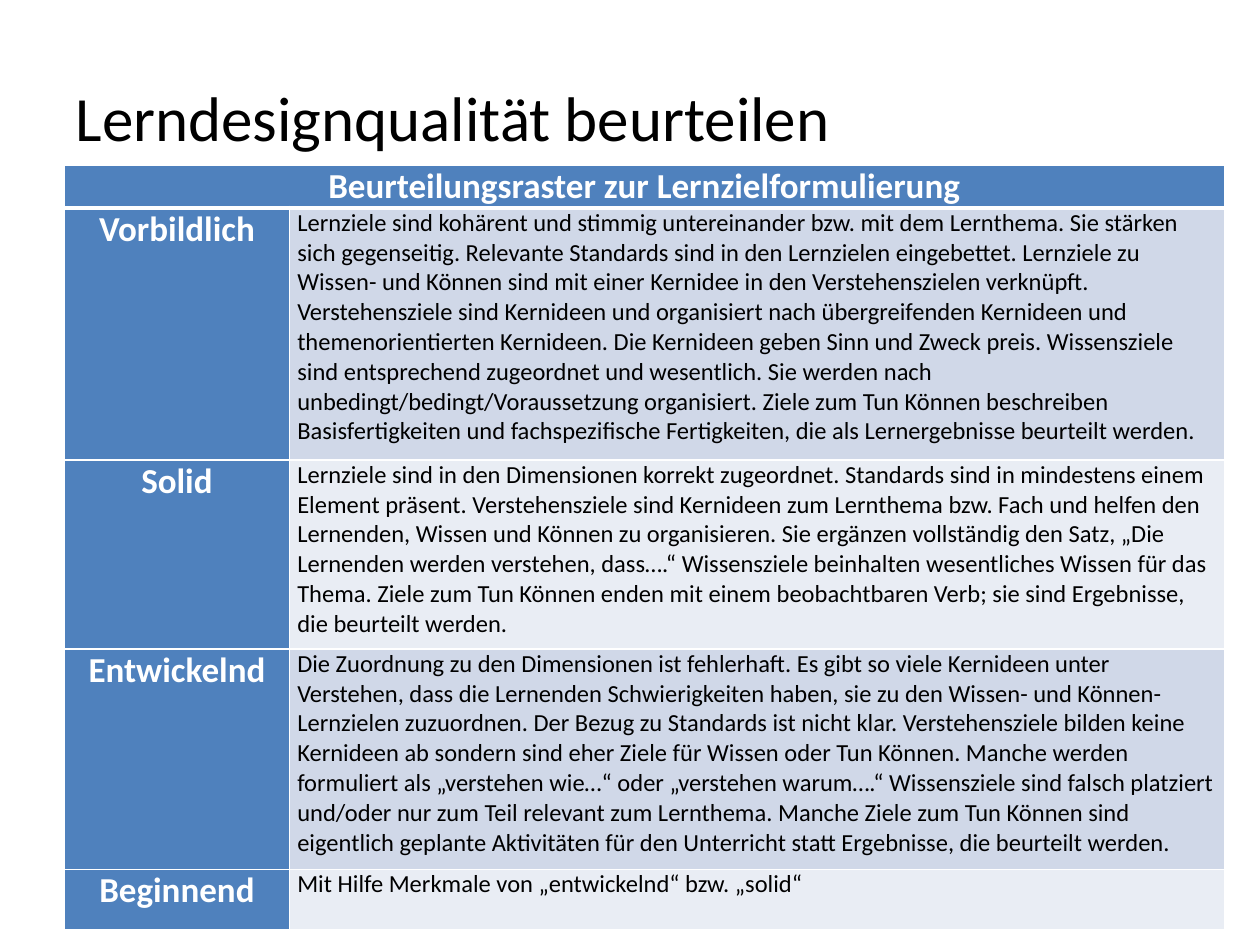
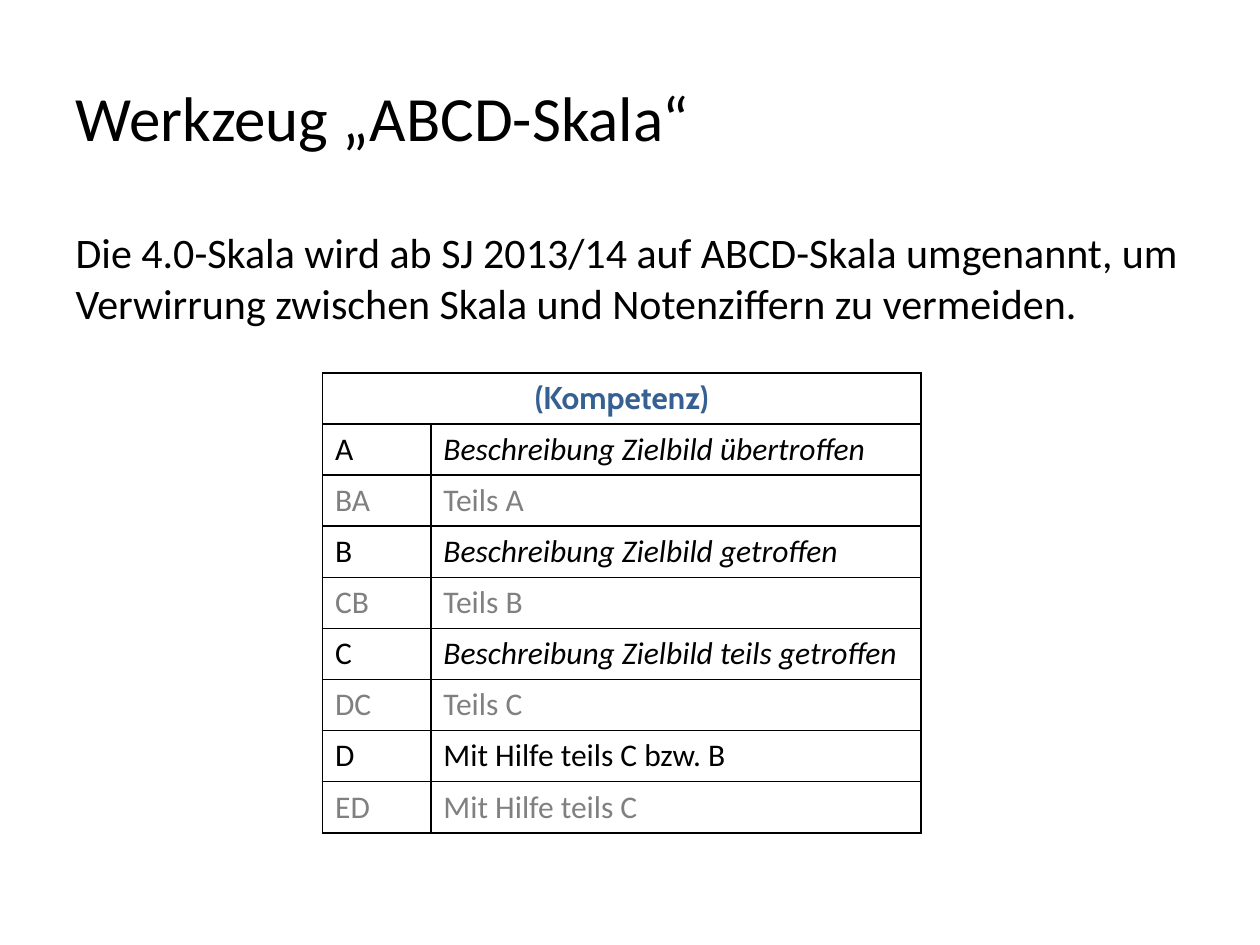
from dataclasses import dataclass

from lxml import etree
from pptx import Presentation
from pptx.dml.color import RGBColor
from pptx.enum import text
from pptx.oxml import ns
from pptx.util import Inches, Pt


@dataclass(frozen=True)
class Theme:
    font: str = "Calibri"
    accent_font: str = "Cabin"
    black: str = "000000"
    white: str = "FFFFFF"
    blue: str = "4F81BD"
    navy: str = "376092"
    grey: str = "808080"
    bands: tuple = ("D0D8E8", "E9EDF4")
    title: int = 36
    body: int = 24
    label: int = 20
    scale: int = 18
    detail: int = 14


T = Theme()
LEFT, CENTER = text.PP_ALIGN.LEFT, text.PP_ALIGN.CENTER
TOP, MIDDLE = text.MSO_ANCHOR.TOP, text.MSO_ANCHOR.MIDDLE

RUBRIC_HEAD = "Beurteilungsraster zur Lernzielformulierung"
RUBRIC = [
    ("Vorbildlich", 2.0,
     "Lernziele sind kohärent und stimmig untereinander bzw. mit dem Lernthema. "
     "Sie stärken sich gegenseitig. Relevante Standards sind in den Lernzielen "
     "eingebettet. Lernziele zu Wissen- und Können sind mit einer Kernidee in den "
     "Verstehenszielen verknüpft. Verstehensziele sind Kernideen und organisiert "
     "nach übergreifenden Kernideen und themenorientierten Kernideen. Die Kernideen "
     "geben Sinn und Zweck preis. Wissensziele sind entsprechend zugeordnet und "
     "wesentlich. Sie werden nach unbedingt/bedingt/Voraussetzung organisiert. Ziele "
     "zum Tun Können beschreiben Basisfertigkeiten und fachspezifische Fertigkeiten, "
     "die als Lernergebnisse beurteilt werden."),
    ("Solid", 1.5,
     "Lernziele sind in den Dimensionen korrekt zugeordnet. Standards sind in "
     "mindestens einem Element präsent. Verstehensziele sind Kernideen zum Lernthema "
     "bzw. Fach und helfen den Lernenden, Wissen und Können zu organisieren. Sie "
     "ergänzen vollständig den Satz, „Die Lernenden werden verstehen, dass….“ "
     "Wissensziele beinhalten wesentliches Wissen für das Thema. Ziele zum Tun Können "
     "enden mit einem beobachtbaren Verb; sie sind Ergebnisse, die beurteilt werden."),
    ("Entwickelnd", 1.75,
     "Die Zuordnung zu den Dimensionen ist fehlerhaft. Es gibt so viele Kernideen "
     "unter Verstehen, dass die Lernenden Schwierigkeiten haben, sie zu den Wissen- "
     "und Können-Lernzielen zuzuordnen. Der Bezug zu Standards ist nicht klar. "
     "Verstehensziele bilden keine Kernideen ab sondern sind eher Ziele für Wissen "
     "oder Tun Können. Manche werden formuliert als „verstehen wie…“ oder „verstehen "
     "warum….“ Wissensziele sind falsch platziert und/oder nur zum Teil relevant zum "
     "Lernthema. Manche Ziele zum Tun Können sind eigentlich geplante Aktivitäten für "
     "den Unterricht statt Ergebnisse, die beurteilt werden."),
    ("Beginnend", 0.48, "Mit Hilfe Merkmale von „entwickelnd“ bzw. „solid“"),
]

SCALE_INTRO = ("Die 4.0-Skala wird ab SJ 2013/14 auf ABCD-Skala umgenannt, um "
               "Verwirrung zwischen Skala und Notenziffern zu vermeiden.")
SCALE_HEAD = "(Kompetenz)"
SCALE = [
    ("A", "Beschreibung Zielbild übertroffen"),
    ("BA", "Teils A"),
    ("B", "Beschreibung Zielbild getroffen"),
    ("CB", "Teils B"),
    ("C", "Beschreibung Zielbild teils getroffen"),
    ("DC", "Teils C"),
    ("D", "Mit Hilfe teils C bzw. B"),
    ("ED", "Mit Hilfe teils C"),
]


def style_text(tf, size, color=T.black, font=T.font, bold=False, italic=False, align=LEFT):
    for p in tf.paragraphs:
        p.alignment = align
        for r in p.runs:
            f = r.font
            f.name, f.size, f.bold, f.italic = font, Pt(size), bold, italic
            f.color.rgb = RGBColor.from_string(color)


def fill_placeholder(sp, box, content, size, anchor):
    sp.left, sp.top, sp.width, sp.height = map(Inches, box)
    tf = sp.text_frame
    tf.text = content
    tf.word_wrap = True
    tf.auto_size = text.MSO_AUTO_SIZE.NONE
    tf.vertical_anchor = anchor
    style_text(tf, size)
    return tf


def add_slide(prs, layout, title):
    s = prs.slides.add_slide(prs.slide_layouts[layout])
    fill_placeholder(s.shapes.title, (0.5, 0.3, 7.18, 1.25), title, T.title, MIDDLE)
    return s


def add_intro(s, box, content):
    tf = fill_placeholder(s.placeholders[1], box, content, T.body, TOP)
    p = tf.paragraphs[0]
    p.space_before = Pt(0)
    pPr = p._p.get_or_add_pPr()
    pPr.set("marL", "0")
    pPr.set("indent", "0")
    etree.SubElement(pPr, ns.qn("a:buNone"))


def set_borders(cell, color, bottom=1):
    tcPr = cell._tc.get_or_add_tcPr()
    for side, width in (("L", 1), ("R", 1), ("T", 1), ("B", bottom)):
        ln = etree.SubElement(tcPr, ns.qn(f"a:ln{side}"), w=str(Pt(width)))
        fill = etree.SubElement(ln, ns.qn("a:solidFill"))
        etree.SubElement(fill, ns.qn("a:srgbClr"), val=color)


def add_grid(s, left, top, cols, rows, margins, border, head_bottom=1):
    frame = s.shapes.add_table(len(rows), len(cols), Inches(left), Inches(top),
                               Inches(sum(cols)), Inches(sum(rows)))
    table = frame.table
    table.first_row = table.horz_banding = False
    for column, width in zip(table.columns, cols):
        column.width = Inches(width)
    for i, (row, height) in enumerate(zip(table.rows, rows)):
        row.height = Inches(height)
        for cell in row.cells:
            cell.margin_left = cell.margin_right = Inches(margins[0])
            cell.margin_top = cell.margin_bottom = Inches(margins[1])
            set_borders(cell, border, head_bottom if i == 0 else 1)
    table.cell(0, 0).merge(table.cell(0, len(cols) - 1))
    return table


def fill_cell(cell, content, fill=None, after=0, **style):
    cell.text = content
    if fill:
        cell.fill.solid()
        cell.fill.fore_color.rgb = RGBColor.from_string(fill)
    else:
        cell.fill.background()
    style_text(cell.text_frame, **style)
    if after:
        cell.text_frame.paragraphs[0].space_after = Pt(after)


def add_rubric(s, left, top):
    table = add_grid(s, left, top, (1.79, 7.42), [0.25] + [h for _, h, _ in RUBRIC],
                     (0.06, 0), T.white, head_bottom=3)
    label = dict(fill=T.blue, size=T.label, color=T.white, bold=True, align=CENTER)
    fill_cell(table.cell(0, 0), RUBRIC_HEAD, **label)
    table.cell(0, 0).vertical_anchor = MIDDLE
    for i, (level, _, criteria) in enumerate(RUBRIC):
        fill_cell(table.cell(i + 1, 0), level, after=6 if i else 0, **label)
        fill_cell(table.cell(i + 1, 1), criteria, fill=T.bands[i % 2], after=6,
                  size=T.detail)


def add_scale(s, left, top):
    table = add_grid(s, left, top, (0.86, 3.89), [0.405] * (len(SCALE) + 1),
                     (0.1, 0.05), T.black)
    fill_cell(table.cell(0, 0), SCALE_HEAD, size=T.scale, color=T.navy,
              font=T.accent_font, bold=True, align=CENTER)
    for i, (grade, meaning) in enumerate(SCALE):
        color = T.grey if i % 2 else T.black
        fill_cell(table.cell(i + 1, 0), grade, size=T.scale, color=color)
        fill_cell(table.cell(i + 1, 1), meaning, size=T.scale, color=color,
                  italic=meaning.startswith("Beschreibung"))


def main():
    prs = Presentation()
    prs.slide_width, prs.slide_height = Inches(10), Inches(7.5)

    s = add_slide(prs, 5, "Lerndesignqualität beurteilen")
    add_rubric(s, 0.51, 1.31)

    s = add_slide(prs, 1, "Werkzeug „ABCD-Skala“")
    add_intro(s, (0.5, 1.75, 9, 4.95), SCALE_INTRO)
    add_scale(s, 2.56, 2.96)

    prs.save("out.pptx")


if __name__ == "__main__":
    main()
